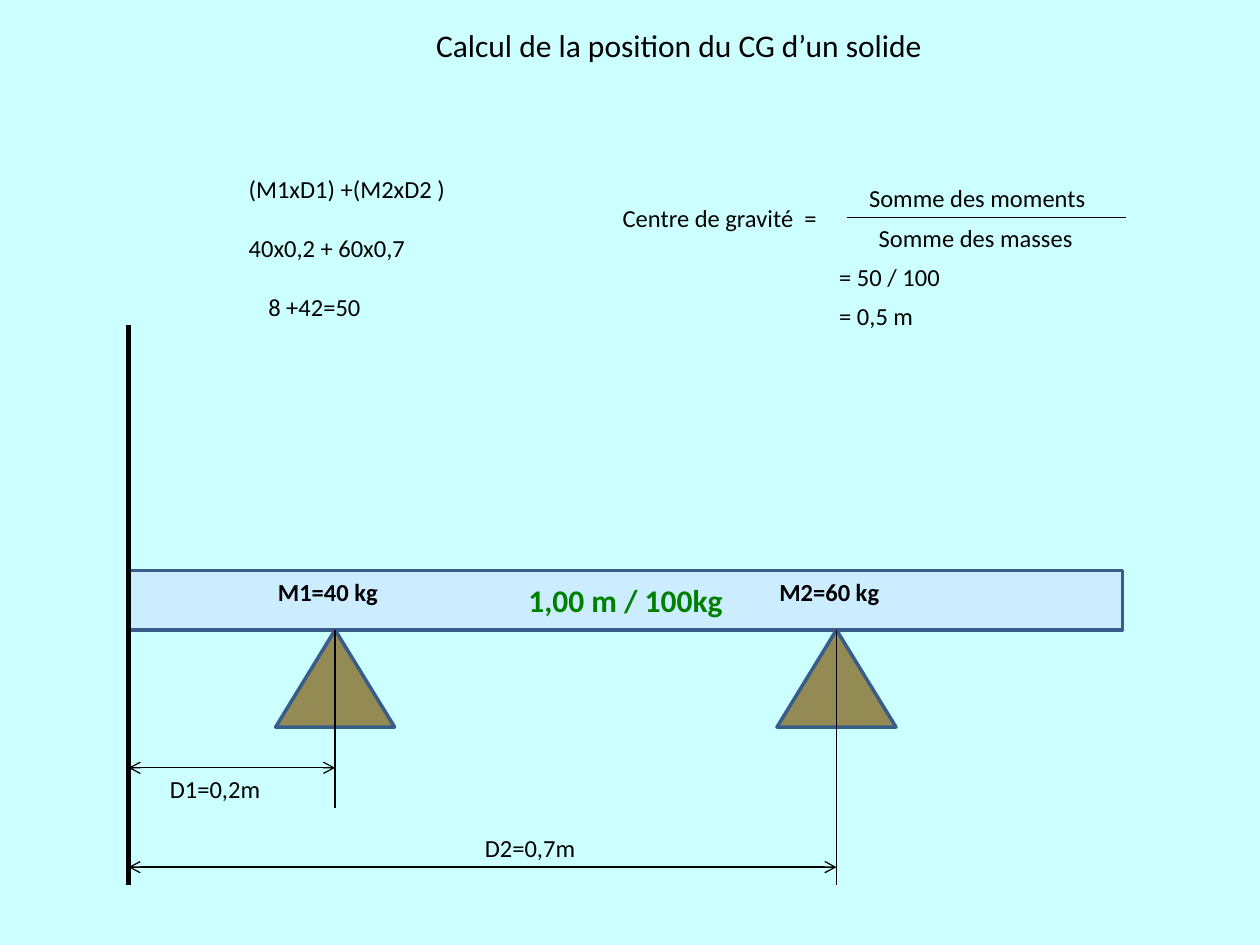
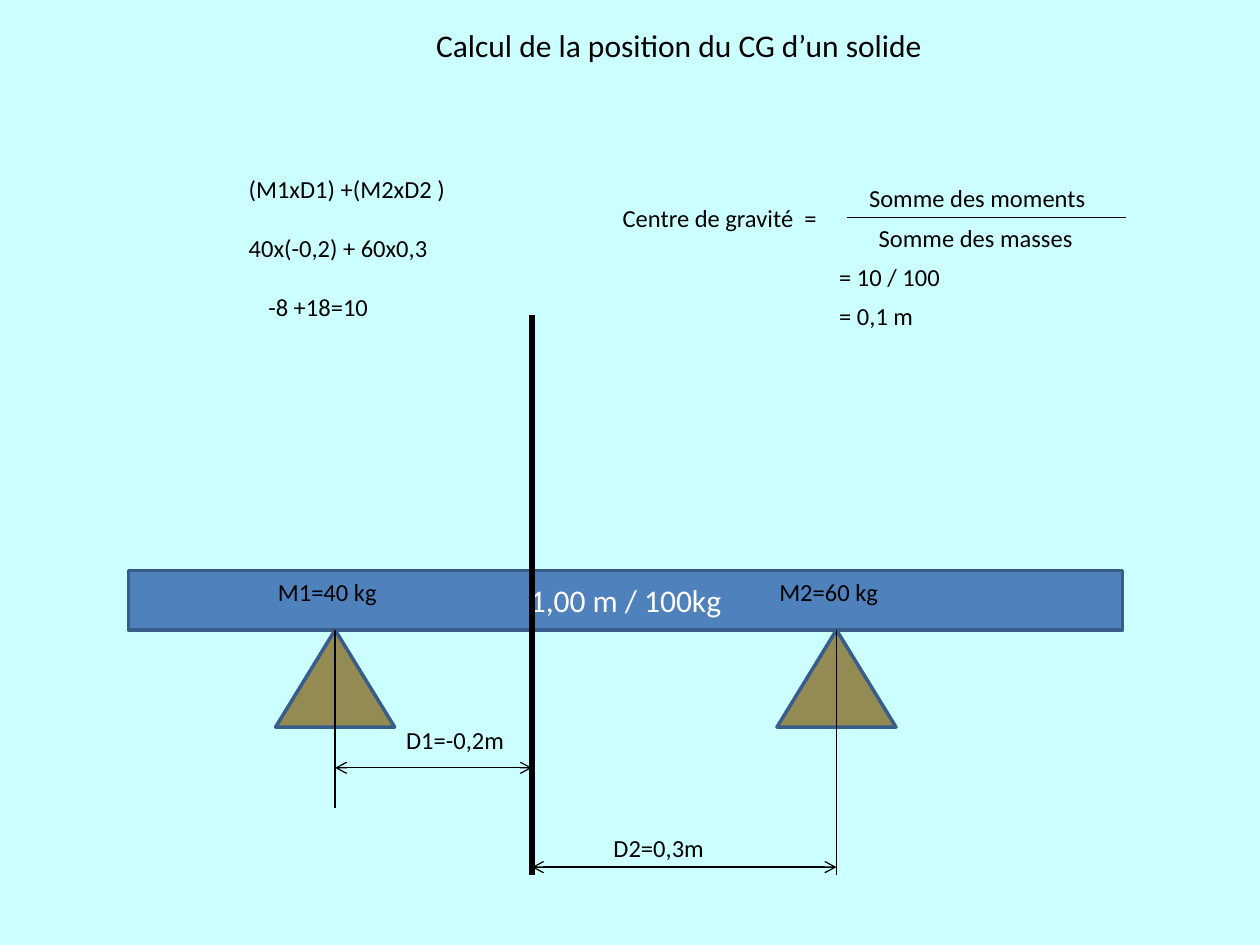
from dataclasses import dataclass

from lxml.etree import SubElement
from pptx import Presentation
from pptx.dml.color import RGBColor
from pptx.enum.shapes import MSO_CONNECTOR, MSO_SHAPE
from pptx.enum.text import MSO_ANCHOR, MSO_AUTO_SIZE, PP_ALIGN
from pptx.oxml.ns import qn
from pptx.util import Pt

FONT = "Calibri"
BACKGROUND = "CCFFFF"
BLACK = "000000"
OUTLINE = "385D8A"
SUPPORT_FILL = "948A54"

BEAM_LEFT, BEAM_TOP, BEAM_WIDTH, BEAM_HEIGHT = 73.5, 326, 568, 34
BEAM_BOTTOM = BEAM_TOP + BEAM_HEIGHT
SUPPORT_WIDTH, SUPPORT_HEIGHT = 68, 55.5
SUPPORT_1_X, SUPPORT_2_X = 191.5, 478
AXIS_HEIGHT = 320
STEM_1_BOTTOM = 461.5
DISTANCE_1_Y, DISTANCE_2_Y = 438.75, 495.5
LABEL_HEIGHT = 24.5


@dataclass
class BalanceCase:
    beam_fill: str
    beam_color: str
    bold: bool
    axis_x: float
    axis_top: float
    products: str
    total: str
    quotient: str
    result: str
    distance_1: tuple
    distance_2: tuple


CASES = [
    BalanceCase("CCECFF", "008000", True, 73.5, 186,
                "40x0,2 + 60x0,7", "8 +42=50", "= 50 / 100", "= 0,5 m",
                ("D1=0,2m", 90, 438.5), ("D2=0,7m", 270, 472.5)),
    BalanceCase("4F81BD", "FFFFFF", False, 304, 180,
                "40x(-0,2) + 60x0,3", "-8 +18=10", "= 10 / 100", "= 0,1 m",
                ("D1=-0,2m", 225, 410.5), ("D2=0,3m", 343.5, 472.5)),
]


def rgb(value):
    return RGBColor.from_string(value)


def write(shape, text, size=14, color=BLACK, bold=False, align=PP_ALIGN.LEFT):
    frame = shape.text_frame
    frame.text = text
    frame.word_wrap = True
    paragraph = frame.paragraphs[0]
    paragraph.alignment = align
    paragraph.font.name = FONT
    paragraph.font.size = Pt(size)
    paragraph.font.bold = bold
    paragraph.font.color.rgb = rgb(color)
    return frame


def add_label(slide, text, left, top, width, bold=False):
    box = slide.shapes.add_textbox(Pt(left), Pt(top), Pt(width), Pt(LABEL_HEIGHT))
    write(box, text, bold=bold).auto_size = MSO_AUTO_SIZE.SHAPE_TO_FIT_TEXT


def add_block(slide, kind, left, top, width, height, fill):
    shape = slide.shapes.add_shape(kind, Pt(left), Pt(top), Pt(width), Pt(height))
    shape.shadow.inherit = False
    shape.fill.solid()
    shape.fill.fore_color.rgb = rgb(fill)
    shape.line.color.rgb = rgb(OUTLINE)
    shape.line.width = Pt(2)
    return shape


def add_line(slide, x1, y1, x2, y2, weight=0.75, arrows=False):
    connector = slide.shapes.add_connector(
        MSO_CONNECTOR.STRAIGHT, Pt(x1), Pt(y1), Pt(x2), Pt(y2))
    connector.line.color.rgb = rgb(BLACK)
    connector.line.width = Pt(weight)
    properties = connector._element.spPr
    if arrows:
        for end in ("a:headEnd", "a:tailEnd"):
            SubElement(properties.find(qn("a:ln")), qn(end), type="arrow")
    SubElement(properties, qn("a:effectLst"))
    return connector


def add_title(slide):
    title = slide.shapes.title
    title.left, title.top, title.width, title.height = Pt(242), Pt(11.5), Pt(300), Pt(29)
    frame = write(title, "Calcul de la position du CG d’un solide", size=18)
    frame.vertical_anchor = MSO_ANCHOR.TOP
    frame.auto_size = MSO_AUTO_SIZE.NONE


def add_beam(slide, case):
    beam = add_block(slide, MSO_SHAPE.RECTANGLE, BEAM_LEFT, BEAM_TOP,
                     BEAM_WIDTH, BEAM_HEIGHT, case.beam_fill)
    frame = write(beam, "1,00 m / 100kg", 18, case.beam_color, case.bold, PP_ALIGN.CENTER)
    frame.vertical_anchor = MSO_ANCHOR.MIDDLE


def add_support(slide, center):
    return add_block(slide, MSO_SHAPE.ISOSCELES_TRIANGLE, center - SUPPORT_WIDTH / 2,
                     BEAM_BOTTOM, SUPPORT_WIDTH, SUPPORT_HEIGHT, SUPPORT_FILL)


def add_diagram(slide, case):
    axis_bottom = case.axis_top + AXIS_HEIGHT
    add_beam(slide, case)
    supports = [add_support(slide, center) for center in (SUPPORT_1_X, SUPPORT_2_X)]
    add_line(slide, case.axis_x, case.axis_top, case.axis_x, axis_bottom, weight=3)
    measures = [
        (SUPPORT_1_X, STEM_1_BOTTOM, DISTANCE_1_Y, case.distance_1, "M1=40 kg"),
        (SUPPORT_2_X, axis_bottom, DISTANCE_2_Y, case.distance_2, "M2=60 kg"),
    ]
    for support, (center, bottom, distance_y, distance, mass) in zip(supports, measures):
        stem = add_line(slide, center, BEAM_BOTTOM, center, bottom)
        stem.begin_connect(support, 0)
        start, end = sorted((case.axis_x, center))
        add_line(slide, start, distance_y, end, distance_y, arrows=True)
        add_label(slide, *distance, 80)
        add_label(slide, mass, center - 39.75, BEAM_TOP, 75, case.bold)


def add_calculation(slide, case):
    labels = [
        ("(M1xD1) +(M2xD2 )", 135, 95.75, 135),
        (case.products, 135, 129.5, 135),
        (case.total, 146.25, 163.25, 80),
        ("Centre de gravité  =", 348.75, 112.5, 130),
        ("Somme des moments", 489.5, 101.25, 145),
        ("Somme des masses", 495, 123.75, 135),
        (case.quotient, 472.5, 146.25, 89),
        (case.result, 472.5, 168.75, 89),
    ]
    for label in labels:
        add_label(slide, *label)
    add_line(slide, 483.75, 124.25, 643.5, 124.25)


def main():
    presentation = Presentation()
    presentation.slide_width, presentation.slide_height = Pt(720), Pt(540)
    background = presentation.slide_master.background.fill
    background.solid()
    background.fore_color.rgb = rgb(BACKGROUND)
    for case in CASES:
        slide = presentation.slides.add_slide(presentation.slide_layouts[5])
        add_title(slide)
        add_diagram(slide, case)
        add_calculation(slide, case)
    presentation.save("out.pptx")


if __name__ == "__main__":
    main()
